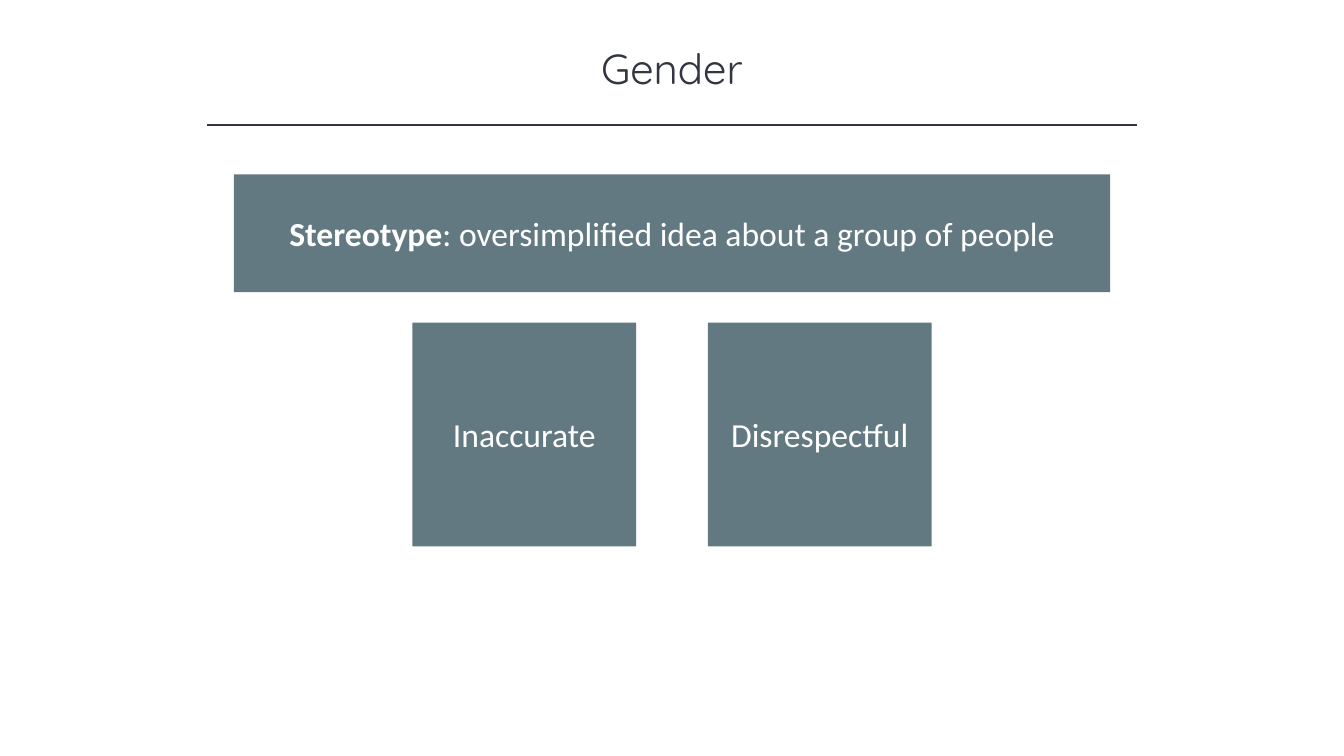
from pptx import Presentation
from pptx.dml.color import RGBColor
from pptx.enum.shapes import MSO_CONNECTOR as Connector, MSO_SHAPE as Shape
from pptx.enum.text import MSO_ANCHOR as Anchor, PP_ALIGN as Align
from pptx.util import Inches, Pt
from lxml.etree import SubElement
from pptx.oxml.ns import qn

# Content
HEADING = "Gender"
DEFINITION = [("Stereotype", True), (": oversimplified idea about a group of people", False)]
TRAITS = ["Inaccurate", "Disrespectful"]

# Layout in inches, centred on the slide
SLIDE_W, SLIDE_H = 13.33, 7.5
HEADING_W, HEADING_TOP, HEADING_H = 10, 0.37, 0.61
RULE_W, RULE_TOP = 9.22, 1.24
DEFINITION_W, DEFINITION_TOP, DEFINITION_H = 8.69, 1.73, 1.17
TRAIT_SIDE, TRAIT_GAP, TRAIT_TOP = 2.22, 0.71, 3.2
INK, SLATE, WHITE = "323542", "627981", "FFFFFF"


def color(hex_code):
    return RGBColor.from_string(hex_code)


def centred(width):
    return (SLIDE_W - width) / 2


def style(paragraph, face, size, hex_code):
    paragraph.alignment = Align.CENTER
    paragraph.font.name = face
    paragraph.font.size = Pt(size)
    paragraph.font.color.rgb = color(hex_code)


def add_panel(left, top, width, height, runs):
    panel = slide.shapes.add_shape(Shape.RECTANGLE, *map(Inches, (left, top, width, height)))
    panel.shadow.inherit = False
    panel.fill.solid()
    panel.fill.fore_color.rgb = color(SLATE)
    panel.line.fill.background()
    panel.text_frame.vertical_anchor = Anchor.MIDDLE
    paragraph = panel.text_frame.paragraphs[0]
    style(paragraph, "Calibri", 24, WHITE)
    for text, bold in runs:
        run = paragraph.add_run()
        run.text = text
        run.font.bold = bold


presentation = Presentation()
presentation.slide_width, presentation.slide_height = Inches(SLIDE_W), Inches(SLIDE_H)
slide = presentation.slides.add_slide(presentation.slide_layouts[5])
slide.background.fill.solid()
slide.background.fill.fore_color.rgb = color(WHITE)

# Heading
heading = slide.shapes.title
heading.left, heading.top = Inches(centred(HEADING_W)), Inches(HEADING_TOP)
heading.width, heading.height = Inches(HEADING_W), Inches(HEADING_H)
heading.text_frame.text = HEADING
heading.text_frame.vertical_anchor = Anchor.TOP
style(heading.text_frame.paragraphs[0], "Quicksand", 30, INK)

# Rule under the heading
rule_left = centred(RULE_W)
rule = slide.shapes.add_connector(
    Connector.STRAIGHT, *map(Inches, (rule_left, RULE_TOP, rule_left + RULE_W, RULE_TOP)))
rule.line.color.rgb = color(INK)
rule.line.width = Pt(1)
SubElement(rule._element.spPr, qn("a:effectLst"))

# Definition and the traits below it
add_panel(centred(DEFINITION_W), DEFINITION_TOP, DEFINITION_W, DEFINITION_H, DEFINITION)
pitch = TRAIT_SIDE + TRAIT_GAP
traits_left = centred(len(TRAITS) * pitch - TRAIT_GAP)
for column, trait in enumerate(TRAITS):
    add_panel(traits_left + column * pitch, TRAIT_TOP, TRAIT_SIDE, TRAIT_SIDE, [(trait, False)])

presentation.save("out.pptx")
